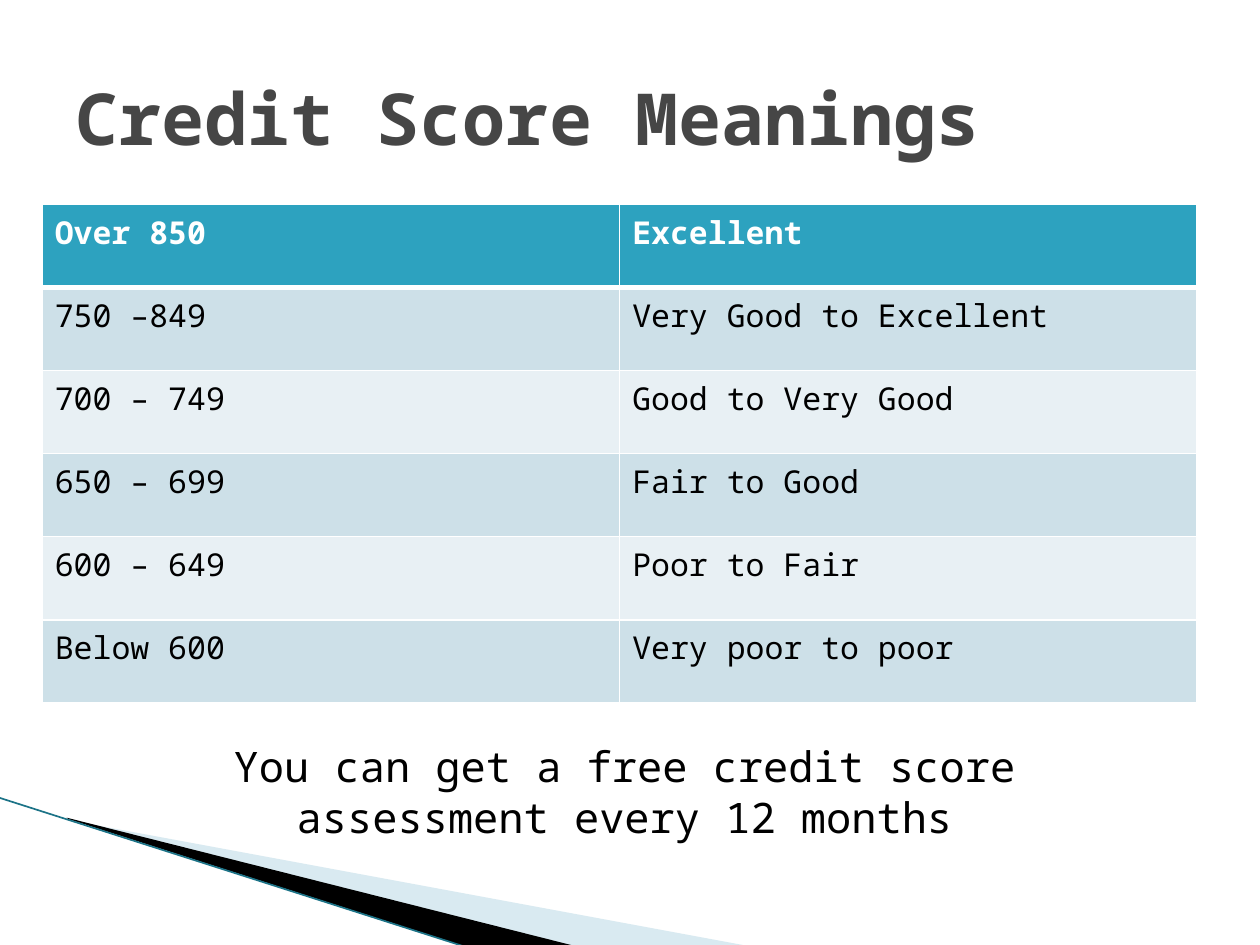
"""Build the slide that explains credit score ranges."""
from lxml.etree import SubElement
from pptx import Presentation
from pptx.dml.color import RGBColor as RGB
from pptx.enum.shapes import MSO_CONNECTOR as Connector
from pptx.enum.text import MSO_ANCHOR as Anchor, PP_ALIGN as Align
from pptx.oxml.ns import qn
from pptx.util import Pt

FONT = "Noto Sans Mono"
COLORS = {
    "title": "464646", "text": "000000", "white": "FFFFFF",
    "header": "2DA2BF", "odd": "CDE0E8", "even": "E8F0F4",
    "pale_wedge": "A0CBDC", "dark_wedge": "000000", "edge": "1C7387",
}
SCORES = [
    ("Over 850", "Excellent"),
    ("750 –849", "Very Good to Excellent"),
    ("700 – 749", "Good to Very Good"),
    ("650 – 699", "Fair to Good"),
    ("600 – 649", "Poor to Fair"),
    ("Below 600", "Very poor to poor"),
]
WEDGES = [
    ("pale_wedge", 40, [(39.6, 468.72), (428.4, 540.72), (328.32, 540.72), (39.6, 468)]),
    ("dark_wedge", 100, [(38.16, 467.28), (329.04, 540.72), (267.84, 541.44), (38.88, 468)]),
]


def add_text(para, text, size, color, bold=False):
    span = para.add_run()
    span.text = text
    span.font.name = FONT
    span.font.size = Pt(size)
    span.font.bold = bold
    span.font.color.rgb = RGB.from_string(COLORS[color])


def add_border(cell, side, width):
    line = SubElement(cell._tc.get_or_add_tcPr(), qn(f"a:ln{side}"), w=str(Pt(width)))
    fill = SubElement(line, qn("a:solidFill"))
    SubElement(fill, qn("a:srgbClr"), val=COLORS["white"])


deck = Presentation()
deck.slide_width, deck.slide_height = Pt(720), Pt(540)
page = deck.slides.add_slide(deck.slide_layouts.get_by_name("Title Only"))

for color, opacity, points in WEDGES:
    corners = [(Pt(x), Pt(y)) for x, y in points]
    builder = page.shapes.build_freeform(*corners[0])
    builder.add_line_segments(corners[1:], close=True)
    wedge = builder.convert_to_shape()
    wedge.shadow.inherit = False
    wedge.fill.solid()
    wedge.fill.fore_color.rgb = RGB.from_string(COLORS[color])
    wedge.line.fill.background()
    if opacity < 100:
        tint = wedge._element.spPr.find(qn("a:solidFill"))[0]
        SubElement(tint, qn("a:alpha"), val=str(opacity * 1000))

edge = page.shapes.add_connector(
    Connector.STRAIGHT, Pt(-0.72), Pt(455.76), Pt(267.12), Pt(541.44))
edge.line.color.rgb = RGB.from_string(COLORS["edge"])
edge.line.width = Pt(0.95)
SubElement(edge._element.spPr, qn("a:effectLst"))

title = page.shapes.title
title.left, title.top, title.width, title.height = Pt(36), Pt(21.6), Pt(648), Pt(90)
title.text_frame.vertical_anchor = Anchor.MIDDLE
para = title.text_frame.paragraphs[0]
para.alignment = Align.LEFT
add_text(para, "Credit Score Meanings", 41, "title", bold=True)

table = page.shapes.add_table(
    len(SCORES), 2, Pt(24.12), Pt(116.64), Pt(660), Pt(285.12)).table
for row, values in enumerate(SCORES):
    header = row == 0
    shade = "header" if header else "odd" if row % 2 else "even"
    for column, value in enumerate(values):
        cell = table.cell(row, column)
        add_border(cell, "L", 1)
        add_border(cell, "R", 1)
        add_border(cell, "T", 3 if row == 1 else 1)
        add_border(cell, "B", 3 if header else 1)
        cell.fill.solid()
        cell.fill.fore_color.rgb = RGB.from_string(COLORS[shade])
        add_text(cell.text_frame.paragraphs[0], value, 18,
                 "white" if header else "text", bold=header)

box = page.shapes.add_textbox(Pt(77.76), Pt(419.76), Pt(558), Pt(65.52))
box.text_frame.word_wrap = True
para = box.text_frame.paragraphs[0]
para.alignment = Align.CENTER
add_text(para, "You can get a free credit score assessment every 12 months", 24, "text")

deck.save("out.pptx")
